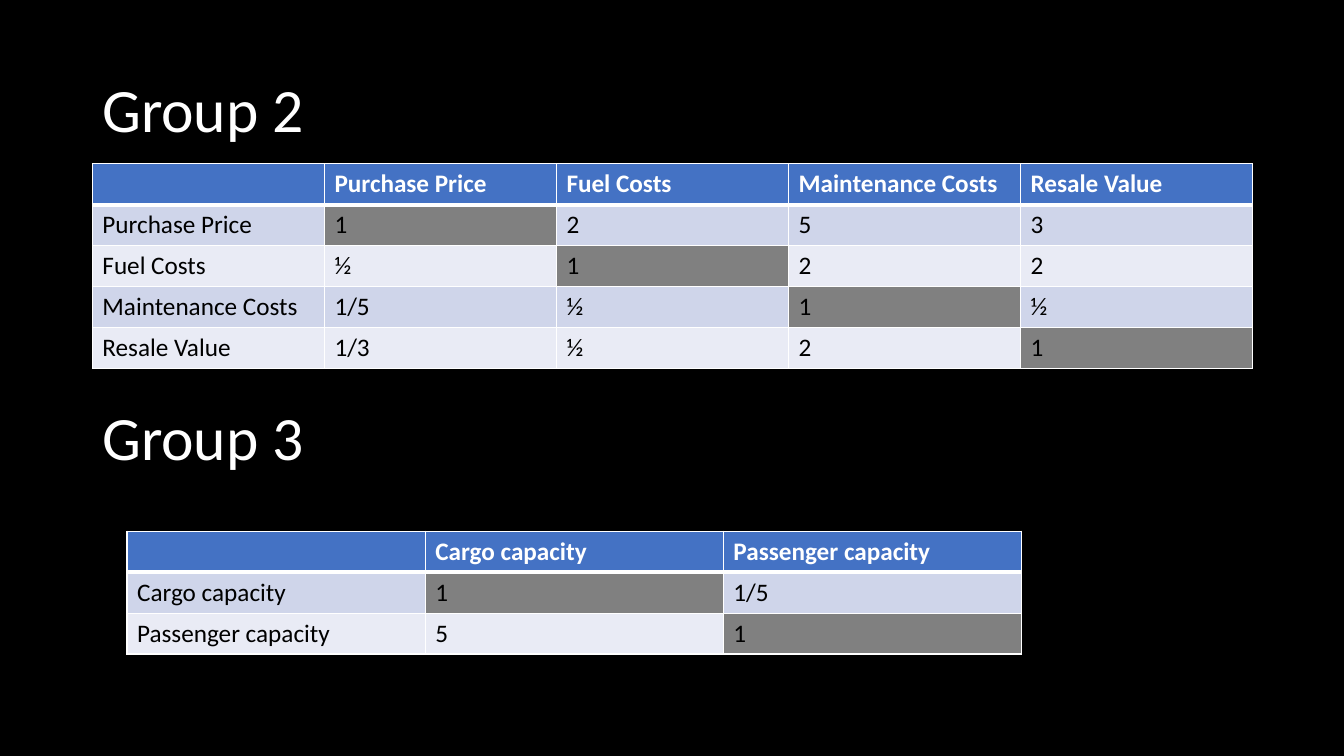
from dataclasses import dataclass

from lxml import etree
from pptx import Presentation
from pptx import util as u
from pptx.dml import color
from pptx.enum import text
from pptx.oxml import ns
from pptx.slide import Slide
from pptx.table import _Cell as Cell
from pptx.text.text import TextFrame

PX = 9525


@dataclass(frozen=True)
class Theme:
    font: str = "Calibri"
    back: str = "000000"
    ink: str = "000000"
    light: str = "FFFFFF"
    head: str = "4472C4"
    bands: tuple[str, str] = ("E9EBF5", "CFD5EA")
    same: str = "808080"
    title: int = 44
    body: int = 18
    thin: int = 1
    thick: int = 3


@dataclass(frozen=True)
class Group:
    name: str
    title_top: int
    left: int
    top: int
    col: int
    labels: list[str]
    rates: list[list[str]]


THEME = Theme()
ROW = 39
GROUPS = [
    Group("Group 2", 38, 88, 156, 221,
          ["Purchase Price", "Fuel Costs", "Maintenance Costs", "Resale Value"],
          [["1", "2", "5", "3"],
           ["½", "1", "2", "2"],
           ["1/5", "½", "1", "½"],
           ["1/3", "½", "2", "1"]]),
    Group("Group 3", 350, 121, 506, 284,
          ["Cargo capacity", "Passenger capacity"],
          [["1", "1/5"],
           ["5", "1"]]),
]


def px(count: int) -> u.Emu:
    return u.Emu(count * PX)


def rgb(code: str) -> color.RGBColor:
    return color.RGBColor.from_string(code)


def write(frame: TextFrame, words: str, *, size: int, ink: str,
          bold: bool = False, space: float = 1.0) -> None:
    para = frame.paragraphs[0]
    para.line_spacing = space
    if not words:
        return
    run = para.add_run()
    run.text = words
    run.font.name = THEME.font
    run.font.size = u.Pt(size)
    run.font.bold = bold
    run.font.color.rgb = rgb(ink)


def edge(cell: Cell, row: int) -> None:
    props = cell._tc.get_or_add_tcPr()
    heavy = {(0, "lnB"), (1, "lnT")}
    for side in ("lnL", "lnR", "lnT", "lnB"):
        width = THEME.thick if (row, side) in heavy else THEME.thin
        line = etree.SubElement(props, ns.qn(f"a:{side}"), w=str(u.Pt(width)))
        fill = etree.SubElement(line, ns.qn("a:solidFill"))
        etree.SubElement(fill, ns.qn("a:srgbClr"), val=THEME.light)


def shade(row: int, col: int) -> str:
    if row == 0:
        return THEME.head
    return THEME.same if row == col else THEME.bands[row % 2]


def draw_title(slide: Slide, group: Group) -> None:
    box = slide.shapes.add_textbox(px(88), px(group.title_top), px(1104), px(139))
    frame = box.text_frame
    frame.word_wrap = True
    frame.vertical_anchor = text.MSO_ANCHOR.MIDDLE
    write(frame, group.name, size=THEME.title, ink=THEME.light, space=0.9)


def draw_table(slide: Slide, group: Group) -> None:
    rows = [["", *group.labels]]
    rows += [[label, *rates] for label, rates in zip(group.labels, group.rates)]
    count = len(rows)
    table = slide.shapes.add_table(count, count, px(group.left), px(group.top),
                                   px(group.col * count), px(ROW * count)).table
    for i, row in enumerate(rows):
        table.rows[i].height = px(ROW)
        table.columns[i].width = px(group.col)
        for j, words in enumerate(row):
            cell = table.cell(i, j)
            edge(cell, i)
            cell.fill.solid()
            cell.fill.fore_color.rgb = rgb(shade(i, j))
            write(cell.text_frame, words, size=THEME.body,
                  ink=THEME.ink if i else THEME.light, bold=i == 0)


def main() -> None:
    deck = Presentation()
    deck.slide_width, deck.slide_height = px(1280), px(720)
    slide = deck.slides.add_slide(deck.slide_layouts[6])
    slide.background.fill.solid()
    slide.background.fill.fore_color.rgb = rgb(THEME.back)
    for group in GROUPS:
        draw_title(slide, group)
        draw_table(slide, group)
    deck.save("out.pptx")


if __name__ == "__main__":
    main()
